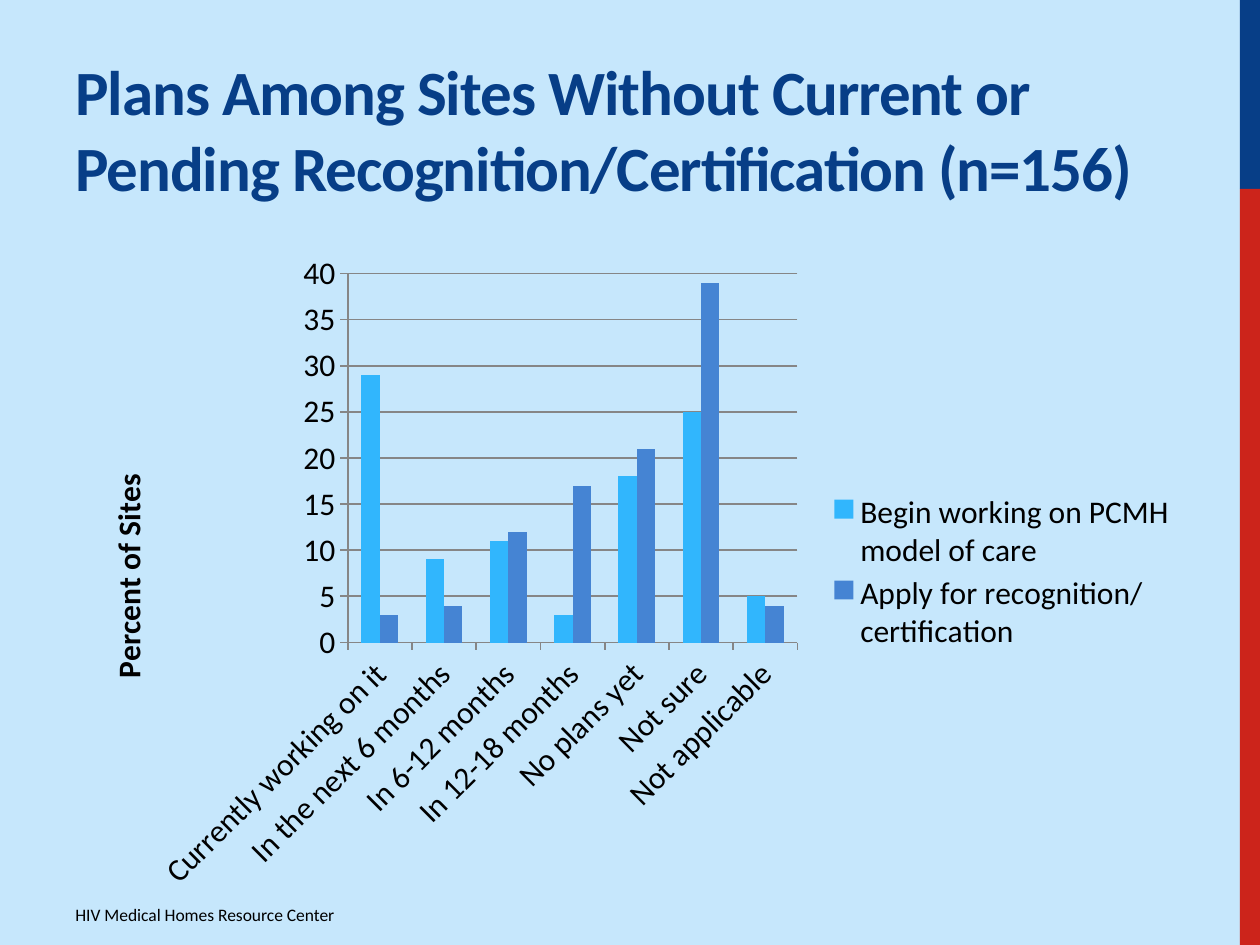
"""Build the slide on site plans for recognition or certification."""
from lxml import etree
from pptx import Presentation
from pptx.chart.data import CategoryChartData
from pptx.dml.color import RGBColor
from pptx.enum import chart as ch, shapes, text as tx
from pptx.oxml import ns
from pptx.util import Inches, Pt

SKY = RGBColor(0xC6, 0xE7, 0xFC)
NAVY = RGBColor(0x07, 0x3E, 0x87)
RED = RGBColor(0xCC, 0x24, 0x1B)
BLACK = RGBColor(0, 0, 0)
GRAY = RGBColor(0x86, 0x86, 0x86)
FONT = "Calibri"

TITLE = "Plans Among Sites Without Current or Pending Recognition/Certification (n=156)"
FOOTER = "HIV Medical Homes Resource Center"
PANELS = [
    ((0, 0, 9.84, 7.5), SKY),
    ((9.84, 0, 0.16, 1.5), NAVY),
    ((9.84, 1.5, 0.16, 6), RED),
]
CATS = ["Currently working on it", "In the next 6 months", "In 6-12 months",
        "In 12-18 months", "No plans yet", "Not sure", "Not applicable"]
SERIES = [
    ("Begin working on PCMH model of care", (29, 9, 11, 3, 18, 25, 5),
     RGBColor(0x31, 0xB6, 0xFD)),
    ("Apply for recognition/ certification", (3, 4, 12, 17, 21, 39, 4),
     RGBColor(0x45, 0x84, 0xD3)),
]
CHART = (0.5, 1.92, 8.92, 5.25)
PLOT = (2.76, 2.17, 3.57, 2.93)
LEGEND = (6.55, 3.88, 2.8, 1.32)
LABEL = (0.8, 3.72)


def style(font, size, color=BLACK, bold=False):
    font.name, font.size, font.bold = FONT, Pt(size), bold
    font.color.rgb = color


def write(slide, box, words, size, color=BLACK, bold=False,
          anchor=tx.MSO_ANCHOR.TOP, space=None):
    frame = slide.shapes.add_textbox(*map(Inches, box)).text_frame
    frame.word_wrap = True
    frame.vertical_anchor = anchor
    run = frame.paragraphs[0].add_run()
    run.text = words
    style(run.font, size, color, bold)
    if space is not None:
        run.font._element.set("spc", str(round(space * 100)))


def place(part, index, box, inner=False):
    for old in part.findall(ns.qn("c:layout")):
        part.remove(old)
    layout = etree.Element(ns.qn("c:layout"))
    manual = etree.SubElement(layout, ns.qn("c:manualLayout"))
    items = [("layoutTarget", "inner")] if inner else []
    items += [("xMode", "edge"), ("yMode", "edge")]
    left, top, wide, high = CHART
    base = (left, top, 0, 0)
    items += [(key, str(round((val - off) / full, 4))) for key, val, off, full
              in zip("xywh", box, base, (wide, high, wide, high))]
    for key, val in items:
        etree.SubElement(manual, ns.qn("c:" + key)).set("val", val)
    part.insert(index, layout)


def draw(slide):
    data = CategoryChartData()
    data.categories = CATS
    for name, vals, _ in SERIES:
        data.add_series(name, vals)
    chart = slide.shapes.add_chart(
        ch.XL_CHART_TYPE.COLUMN_CLUSTERED, *map(Inches, CHART), data).chart
    style(chart.font, 18)
    chart.has_title = False
    plot = chart.plots[0]
    plot.vary_by_categories = False
    plot.gap_width, plot.overlap = 150, 0
    for bars, (_, _, color) in zip(plot.series, SERIES):
        bars.format.fill.solid()
        bars.format.fill.fore_color.rgb = color

    cat, val = chart.category_axis, chart.value_axis
    val.minimum_scale, val.maximum_scale, val.major_unit = 0, 40, 5
    val.has_major_gridlines = True
    for line in (cat.format.line, val.format.line, val.major_gridlines.format.line):
        line.color.rgb = GRAY
        line.width = Pt(1)
    for axis in (cat, val):
        axis.major_tick_mark = ch.XL_TICK_MARK.OUTSIDE
        style(axis.tick_labels.font, 18)
    body = cat._element.find(ns.qn("c:txPr")).find(ns.qn("a:bodyPr"))
    body.set("rot", "-2700000")
    body.set("vert", "horz")

    frame = val.axis_title.text_frame
    run = frame.paragraphs[0].add_run()
    run.text = "Percent of Sites"
    style(run.font, 18, bold=True)
    turn = frame._txBody.find(ns.qn("a:bodyPr"))
    turn.set("rot", "-5400000")
    turn.set("vert", "horz")

    chart.has_legend = True
    key = chart.legend
    key.position = ch.XL_LEGEND_POSITION.RIGHT
    key.include_in_layout = False
    style(key.font, 18)
    place(plot._element.getparent(), 0, PLOT, inner=True)
    place(val.axis_title._element, 1, LABEL)
    place(key._element, 1, LEGEND)


def main():
    deck = Presentation()
    deck.slide_width, deck.slide_height = Inches(10), Inches(7.5)
    slide = deck.slides.add_slide(deck.slide_layouts[6])
    for box, color in PANELS:
        panel = slide.shapes.add_shape(
            shapes.MSO_SHAPE.RECTANGLE, *map(Inches, box))
        panel.shadow.inherit = False
        panel.fill.solid()
        panel.fill.fore_color.rgb = color
        panel.line.fill.background()
    write(slide, (0.5, 7.1, 3.75, 0.31), FOOTER, 10,
          anchor=tx.MSO_ANCHOR.MIDDLE)
    write(slide, (0.5, 0.17, 8.87, 1.5), TITLE, 36, color=NAVY, bold=True,
          anchor=tx.MSO_ANCHOR.BOTTOM, space=-0.6)
    draw(slide)
    deck.save("out.pptx")


if __name__ == "__main__":
    main()
